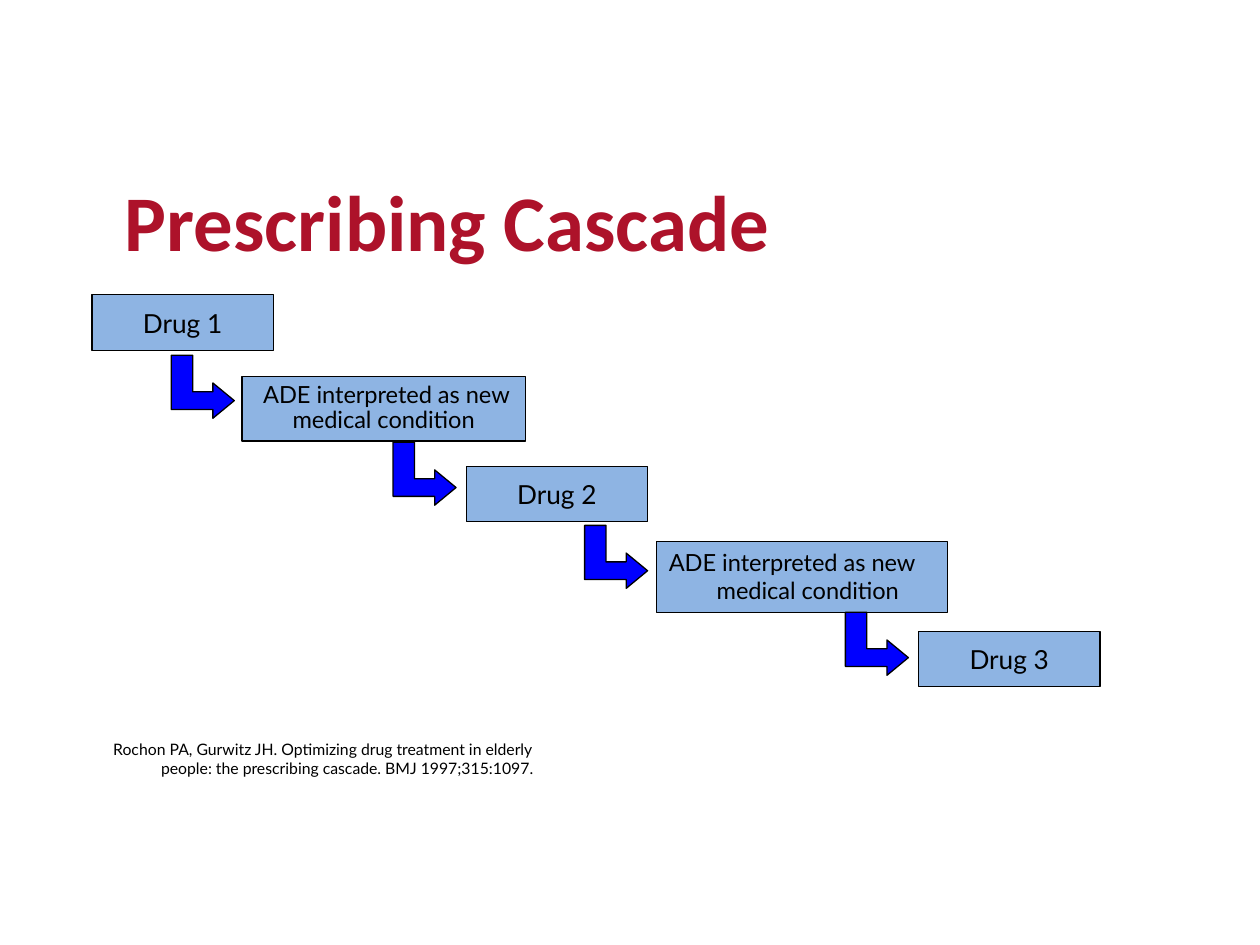
from pptx import Presentation
from pptx.dml.color import RGBColor
from pptx.enum.shapes import MSO_SHAPE
from pptx.enum.text import MSO_ANCHOR, PP_ALIGN
from pptx.util import Inches, Pt

COLORS = {"title": "AD122A", "box": "8EB4E3", "arrow": "0000FF", "ink": "000000"}


def write(frame, text, font, color, hanging=False, **paragraph_format):
    paragraph = frame.paragraphs[0]
    paragraph.text = text
    for name, value in paragraph_format.items():
        setattr(paragraph, name, value)
    for name, value in font.items():
        setattr(paragraph.font, name, value)
    paragraph.font.color.rgb = RGBColor.from_string(COLORS[color])
    if hanging:
        properties = paragraph._p.get_or_add_pPr()
        properties.set("marL", str(Inches(0.38)))
        properties.set("indent", str(-Inches(0.38)))


def paint(shape, fill):
    shape.shadow.inherit = False
    shape.fill.solid()
    shape.fill.fore_color.rgb = RGBColor.from_string(COLORS[fill])
    shape.line.color.rgb = RGBColor.from_string(COLORS["ink"])
    shape.line.width = Pt(0.75)


prs = Presentation()
prs.slide_width, prs.slide_height = Inches(10), Inches(7.5)
slide = prs.slides.add_slide(prs.slide_layouts[5])

title = slide.shapes.title
title.left, title.top = Inches(0.89), Inches(1.36)
title.width, title.height = Inches(6.75), Inches(0.77)
frame_format = {"vertical_anchor": MSO_ANCHOR.BOTTOM, "word_wrap": True,
                "margin_top": 0, "margin_bottom": 0}
for name, value in frame_format.items():
    setattr(title.text_frame, name, value)
write(title.text_frame, "Prescribing Cascade",
      {"name": "Calibri", "size": Pt(45), "bold": True}, "title",
      alignment=PP_ALIGN.LEFT, line_spacing=0.9)

# Drugs
drug_font = {"name": "Lato", "size": Pt(15)}
for number, (left, top) in enumerate([(0.73, 2.34), (3.7, 3.7), (7.29, 5.01)], start=1):
    drug = slide.shapes.add_shape(MSO_SHAPE.FLOWCHART_PROCESS, Inches(left),
                                  Inches(top), Inches(1.44), Inches(0.44))
    paint(drug, "box")
    drug.text_frame.word_wrap = False
    drug.text_frame.vertical_anchor = MSO_ANCHOR.MIDDLE
    write(drug.text_frame, f"Drug {number}", drug_font, "ink", alignment=PP_ALIGN.CENTER)

# Adverse drug events
event_font = {"name": "Lato", "size": Pt(13.5)}
event_text = "ADE interpreted as new medical condition"
events = [
    (1.92, 2.99, 2.25, 0.51, " " + event_text,
     {"alignment": PP_ALIGN.CENTER, "line_spacing": 0.9}),
    (5.21, 4.3, 2.31, 0.56, event_text, {"alignment": PP_ALIGN.LEFT, "hanging": True}),
]
for left, top, width, height, text, layout in events:
    event = slide.shapes.add_shape(MSO_SHAPE.FLOWCHART_PROCESS, Inches(left),
                                   Inches(top), Inches(width), Inches(height))
    paint(event, "box")
    event.text_frame.word_wrap = True
    event.text_frame.vertical_anchor = MSO_ANCHOR.TOP
    write(event.text_frame, text, event_font, "ink", **layout)

# Bent arrows from each step to the next
arrow_outline = [(0, 0), (0.17, 0), (0.17, 0.29), (0.33, 0.29), (0.33, 0.22),
                 (0.5, 0.36), (0.33, 0.5), (0.33, 0.43), (0, 0.43)]
for left, top in [(1.36, 2.82), (3.12, 3.51), (4.64, 4.17), (6.71, 4.86)]:
    points = [(Inches(left + x), Inches(top + y)) for x, y in arrow_outline]
    builder = slide.shapes.build_freeform(*points[0])
    builder.add_line_segments(points[1:], close=True)
    paint(builder.convert_to_shape(), "arrow")

citation = slide.shapes.add_textbox(Inches(0.8), Inches(5.82), Inches(3.71), Inches(0.4))
citation.text_frame.word_wrap = True
write(citation.text_frame,
      "Rochon PA, Gurwitz JH. Optimizing drug treatment in elderly people: "
      "the prescribing cascade. BMJ 1997;315:1097.",
      {"name": "Lato", "size": Pt(9)}, "ink", hanging=True)

prs.save("out.pptx")
